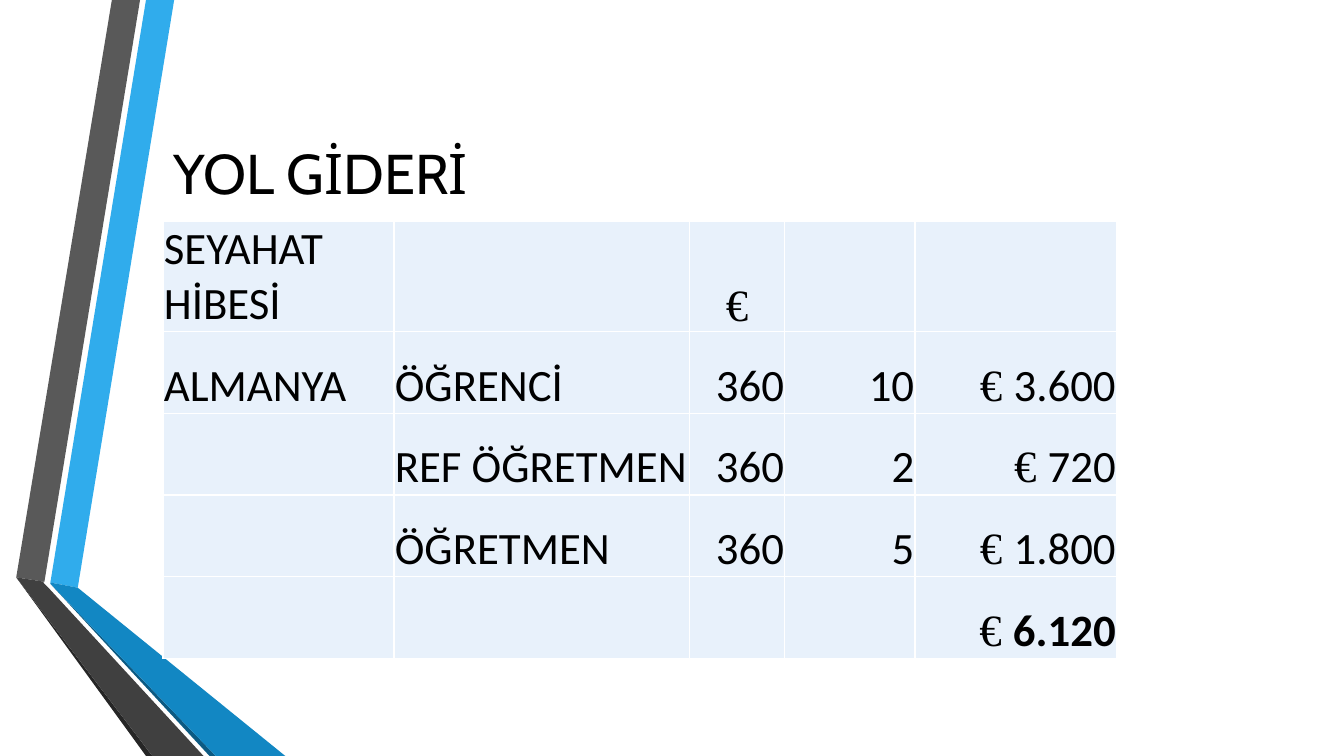
from lxml import etree
from pptx import Presentation
from pptx import util as u
from pptx.dml.color import RGBColor
from pptx.enum import text
from pptx.oxml.ns import qn

TITLE = "YOL GİDERİ"
BODY_FONT, EURO_FONT, TITLE_FONT = "Calibri", "Times New Roman", "Cabin"
BLACK, WHITE, CELL_FILL = "000000", "FFFFFF", "E8F1FB"

ROWS = [
    ["SEYAHAT HİBESİ", "", "€", "", ""],
    ["ALMANYA", "ÖĞRENCİ", "360", "10", "€ 3.600"],
    ["", "REF ÖĞRETMEN", "360", "2", "€ 720"],
    ["", "ÖĞRETMEN", "360", "5", "€ 1.800"],
    ["", "", "", "", "€ 6.120"],
]
COLUMN_WIDTHS = [5.82, 7.44, 2.41, 3.28, 5.08]
ROW_HEIGHT = 2.06
LEFT, TABLE_TOP = 4.11, 5.57

RIBBONS = [
    ("30ACEC", [(1.27, 14.68), (1.96, 14.81), (4.39, 0), (3.68, 0)]),
    ("595959", [(3.53, 0), (2.82, 0), (0.41, 14.55), (1.12, 14.66)]),
    ("262626", [(0.41, 14.55), (3.68, 19.05), (3.84, 19.05)]),
    ("0C5A82", [(1.27, 14.71), (5.28, 19.05), (5.44, 19.05)]),
    ("1287C3", [(1.27, 14.71), (5.44, 19.05), (7.19, 19.05), (1.96, 14.81), (1.27, 14.68)]),
    ("404040", [(5.13, 19.05), (1.22, 14.81), (1.09, 14.68), (1.12, 14.66),
                (0.41, 14.55), (3.84, 19.05)]),
]


def color(value):
    return RGBColor.from_string(value)


def add_text(para, words, font=BODY_FONT, size=32, bold=False, align=text.PP_ALIGN.LEFT):
    para.alignment = align
    span = para.add_run()
    span.text = words
    span.font.name = font
    span.font.size = u.Pt(size)
    span.font.bold = bold
    span.font.color.rgb = color(BLACK)


def add_ribbon(page, fill, points):
    corners = [(u.Cm(x), u.Cm(y)) for x, y in points]
    builder = page.shapes.build_freeform(*corners[0])
    builder.add_line_segments(corners[1:], close=True)
    ribbon = builder.convert_to_shape()
    ribbon.shadow.inherit = False
    ribbon.fill.solid()
    ribbon.fill.fore_color.rgb = color(fill)
    ribbon.line.fill.background()


def format_cell(cell):
    properties = cell._tc.get_or_add_tcPr()
    for side in ("lnL", "lnR", "lnT", "lnB"):
        border = etree.SubElement(properties, qn("a:" + side), w=str(u.Pt(1)))
        paint = etree.SubElement(border, qn("a:solidFill"))
        etree.SubElement(paint, qn("a:srgbClr"), val=WHITE)
    cell.fill.solid()
    cell.fill.fore_color.rgb = color(CELL_FILL)
    cell.vertical_anchor = text.MSO_ANCHOR.BOTTOM
    cell.margin_left = cell.margin_right = cell.margin_top = u.Cm(0.02)
    cell.margin_bottom = 0


def fill_cell(cell, words, column, bold):
    para = cell.text_frame.paragraphs[0]
    align = text.PP_ALIGN.LEFT if column < 2 else text.PP_ALIGN.RIGHT
    if words == "€":
        add_text(para, words, font=EURO_FONT, align=text.PP_ALIGN.CENTER)
    elif words.startswith("€"):
        add_text(para, words[:2], font=EURO_FONT, align=align)
        add_text(para, words[2:], bold=bold, align=align)
    elif words:
        add_text(para, words, align=align)


def add_cost_table(page):
    frame = page.shapes.add_table(
        len(ROWS), len(COLUMN_WIDTHS), u.Cm(LEFT), u.Cm(TABLE_TOP),
        u.Cm(sum(COLUMN_WIDTHS)), u.Cm(ROW_HEIGHT * len(ROWS)))
    table = frame.table
    table.first_row = table.horz_banding = False
    for column, width in zip(table.columns, COLUMN_WIDTHS):
        column.width = u.Cm(width)
    for r, row in enumerate(ROWS):
        table.rows[r].height = u.Cm(ROW_HEIGHT)
        for c, words in enumerate(row):
            cell = table.cell(r, c)
            format_cell(cell)
            fill_cell(cell, words, c, bold=r == len(ROWS) - 1)


def add_title(page):
    title = page.shapes.title
    title.left, title.top = u.Cm(LEFT), u.Cm(1.9)
    title.width, title.height = u.Cm(27.84), u.Cm(4.88)
    title.text_frame.vertical_anchor = text.MSO_ANCHOR.MIDDLE
    add_text(title.text_frame.paragraphs[0], TITLE, font=TITLE_FONT, size=40)


def main():
    deck = Presentation()
    deck.slide_width, deck.slide_height = u.Cm(33.87), u.Cm(19.05)
    page = deck.slides.add_slide(deck.slide_layouts[5])
    add_title(page)
    for fill, points in RIBBONS:
        add_ribbon(page, fill, points)
    add_cost_table(page)
    deck.save("out.pptx")


if __name__ == "__main__":
    main()
